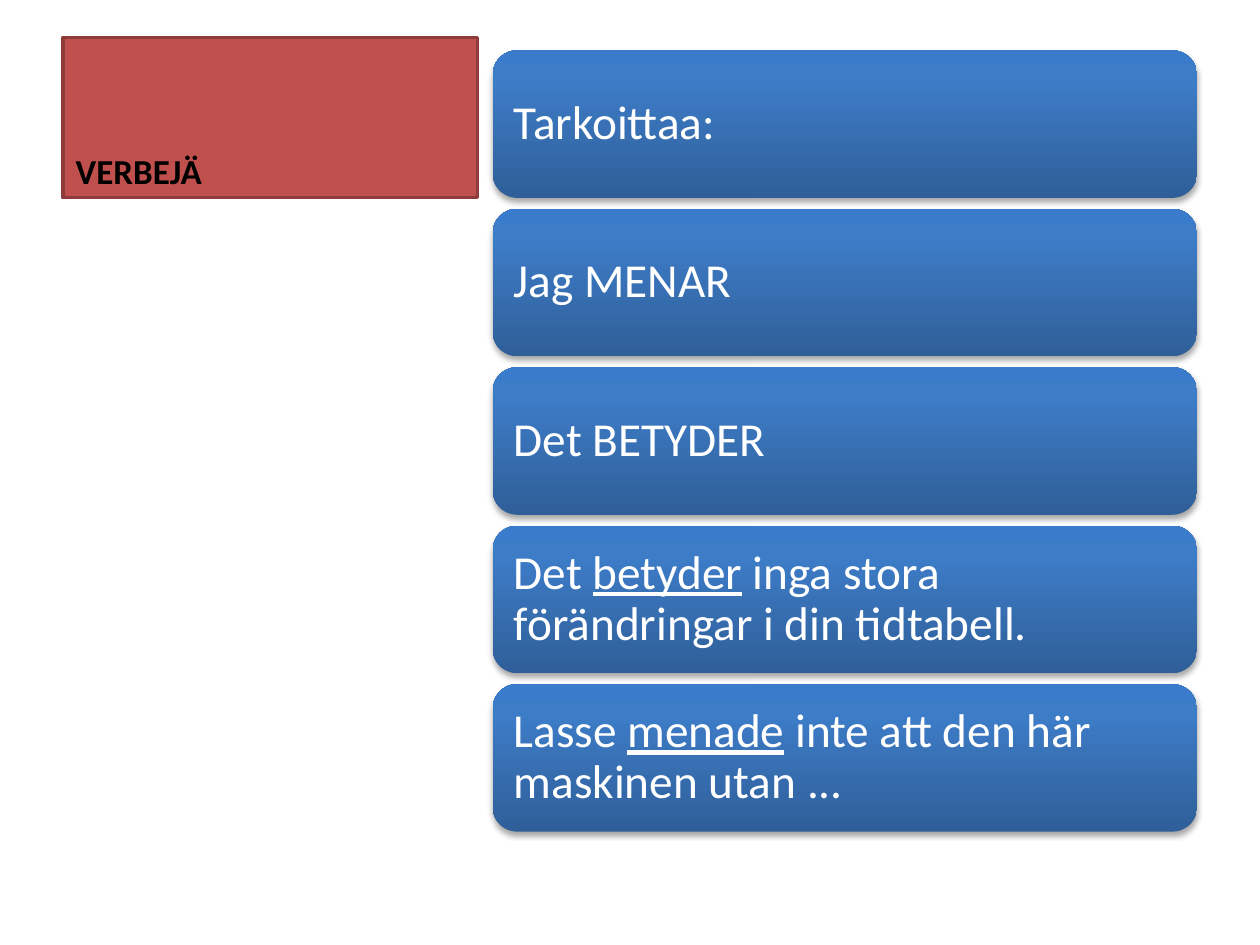
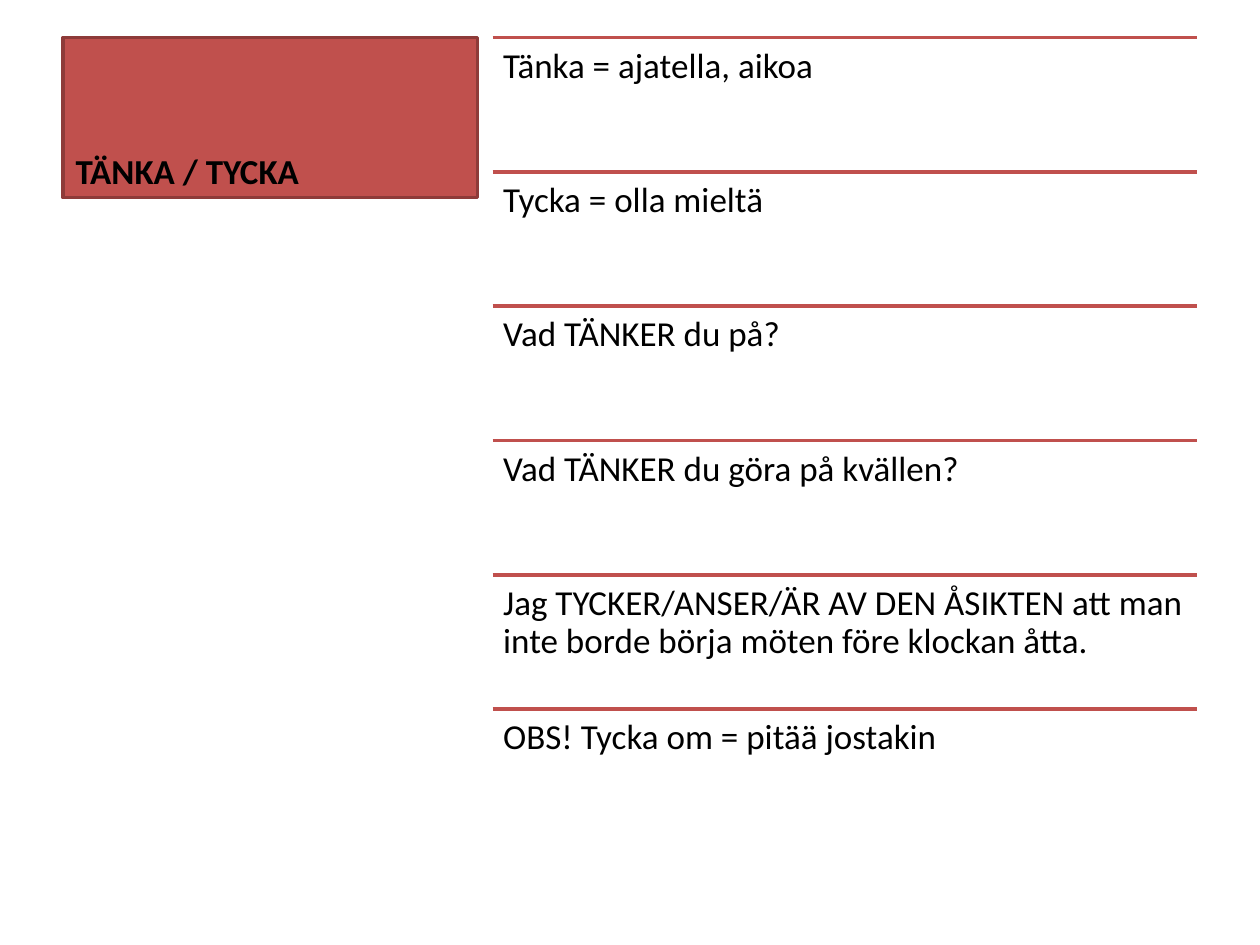
import copy

import pptx
import pptx.dml.color
import pptx.enum.shapes
import pptx.enum.text
import pptx.oxml
import pptx.oxml.ns
import pptx.util
from pptx.dml.color import RGBColor
from pptx.util import Pt

RED = RGBColor(0xC0, 0x50, 0x4D)
DARK_RED = RGBColor(0x8E, 0x3B, 0x39)
BLACK = RGBColor(0x00, 0x00, 0x00)
WHITE = RGBColor(0xFF, 0xFF, 0xFF)
CARD_STOPS = [
    (0, RGBColor(0x2F, 0x5F, 0x99)),
    (0.8, RGBColor(0x3D, 0x7C, 0xC7)),
    (1, RGBColor(0x3A, 0x7C, 0xCB)),
]

FONT = "Calibri"
TITLE_ONLY = 5
CONTENT_LEFT, CONTENT_WIDTH = 281.5, 402.5
CARD_TOP, CARD_HEIGHT, CARD_PITCH = 28.8, 84.3, 90.54
ROW_TOP, ROW_HEIGHT = 21.5, 76.75

VERB_CARDS = [
    [("Tarkoittaa:", False)],
    [("Jag MENAR", False)],
    [("Det BETYDER", False)],
    [("Det ", False), ("betyder", True),
     (" inga stora förändringar i din tidtabell.", False)],
    [("Lasse ", False), ("menade", True),
     (" inte att den här maskinen utan ...", False)],
]
THINK_ROWS = [
    "Tänka = ajatella, aikoa",
    "Tycka = olla mieltä",
    "Vad TÄNKER du på?",
    "Vad TÄNKER du göra på kvällen?",
    "Jag TYCKER/ANSER/ÄR AV DEN ÅSIKTEN att man inte borde börja möten före klockan åtta.",
    "OBS! Tycka om = pitää jostakin",
]


def add_run(paragraph, text, size, color, bold=False, underline=False):
    run = paragraph.add_run()
    run.text = text
    run.font.name = FONT
    run.font.size = Pt(size)
    run.font.color.rgb = color
    run.font.bold = bold
    run.font.underline = underline


def prepare_text(frame, inset, anchor):
    frame.word_wrap = True
    frame.vertical_anchor = anchor
    frame.margin_left = frame.margin_right = Pt(inset)
    frame.margin_top = frame.margin_bottom = Pt(inset)
    paragraph = frame.paragraphs[0]
    paragraph.alignment = pptx.enum.text.PP_ALIGN.LEFT
    paragraph.line_spacing = 0.9
    return paragraph


def add_titled_slide(deck, heading):
    slide = deck.slides.add_slide(deck.slide_layouts[TITLE_ONLY])
    title = slide.shapes.title
    title.left, title.top = Pt(36), Pt(21.5)
    title.width, title.height = Pt(237), Pt(91.5)
    title.fill.solid()
    title.fill.fore_color.rgb = RED
    title.line.color.rgb = DARK_RED
    title.line.width = Pt(2)
    title.text_frame.vertical_anchor = pptx.enum.text.MSO_ANCHOR.BOTTOM
    paragraph = title.text_frame.paragraphs[0]
    paragraph.alignment = pptx.enum.text.PP_ALIGN.LEFT
    add_run(paragraph, heading, 20, BLACK, bold=True)
    return slide


def fill_card(card):
    card.fill.gradient()
    card.fill.gradient_angle = 90
    stop_list = card.element.spPr.find(".//" + pptx.oxml.ns.qn("a:gsLst"))
    stop_list.append(copy.deepcopy(stop_list[-1]))
    for stop, (position, color) in zip(card.fill.gradient_stops, CARD_STOPS):
        stop.position = position
        stop.color.rgb = color


def cast_shadow(card):
    card.shadow.inherit = False
    effects = card.element.spPr.find(pptx.oxml.ns.qn("a:effectLst"))
    effects.append(pptx.oxml.parse_xml(
        f'<a:outerShdw {pptx.oxml.ns.nsdecls("a")} blurRad="{Pt(3.1)}" '
        f'dist="{Pt(1.8)}" dir="5400000" rotWithShape="0">'
        '<a:srgbClr val="000000"><a:alpha val="35000"/></a:srgbClr>'
        '</a:outerShdw>'))


def add_card(slide, top, phrases):
    card = slide.shapes.add_shape(
        pptx.enum.shapes.MSO_SHAPE.ROUNDED_RECTANGLE,
        Pt(CONTENT_LEFT), Pt(top), Pt(CONTENT_WIDTH), Pt(CARD_HEIGHT))
    fill_card(card)
    card.line.fill.background()
    cast_shadow(card)
    paragraph = prepare_text(card.text_frame, 8, pptx.enum.text.MSO_ANCHOR.MIDDLE)
    for text, underlined in phrases:
        add_run(paragraph, text, 27, WHITE, underline=underlined)


def add_ruled_row(slide, top, sentence):
    rule = slide.shapes.add_connector(
        pptx.enum.shapes.MSO_CONNECTOR.STRAIGHT, Pt(CONTENT_LEFT), Pt(top),
        Pt(CONTENT_LEFT + CONTENT_WIDTH), Pt(top))
    rule.line.color.rgb = RED
    rule.line.width = Pt(2)
    rule.element.spPr.append(pptx.oxml.parse_xml(
        f'<a:effectLst {pptx.oxml.ns.nsdecls("a")}/>'))
    row = slide.shapes.add_textbox(
        Pt(CONTENT_LEFT), Pt(top), Pt(CONTENT_WIDTH), Pt(ROW_HEIGHT))
    paragraph = prepare_text(row.text_frame, 6, pptx.enum.text.MSO_ANCHOR.TOP)
    add_run(paragraph, sentence, 20, BLACK)


def main():
    deck = pptx.Presentation()
    deck.slide_width, deck.slide_height = Pt(720), Pt(540)

    verbs = add_titled_slide(deck, "VERBEJÄ")
    for index, phrases in enumerate(VERB_CARDS):
        add_card(verbs, CARD_TOP + index * CARD_PITCH, phrases)

    thinking = add_titled_slide(deck, "TÄNKA / TYCKA")
    for index, sentence in enumerate(THINK_ROWS):
        add_ruled_row(thinking, ROW_TOP + index * ROW_HEIGHT, sentence)

    deck.save("out.pptx")


if __name__ == "__main__":
    main()
